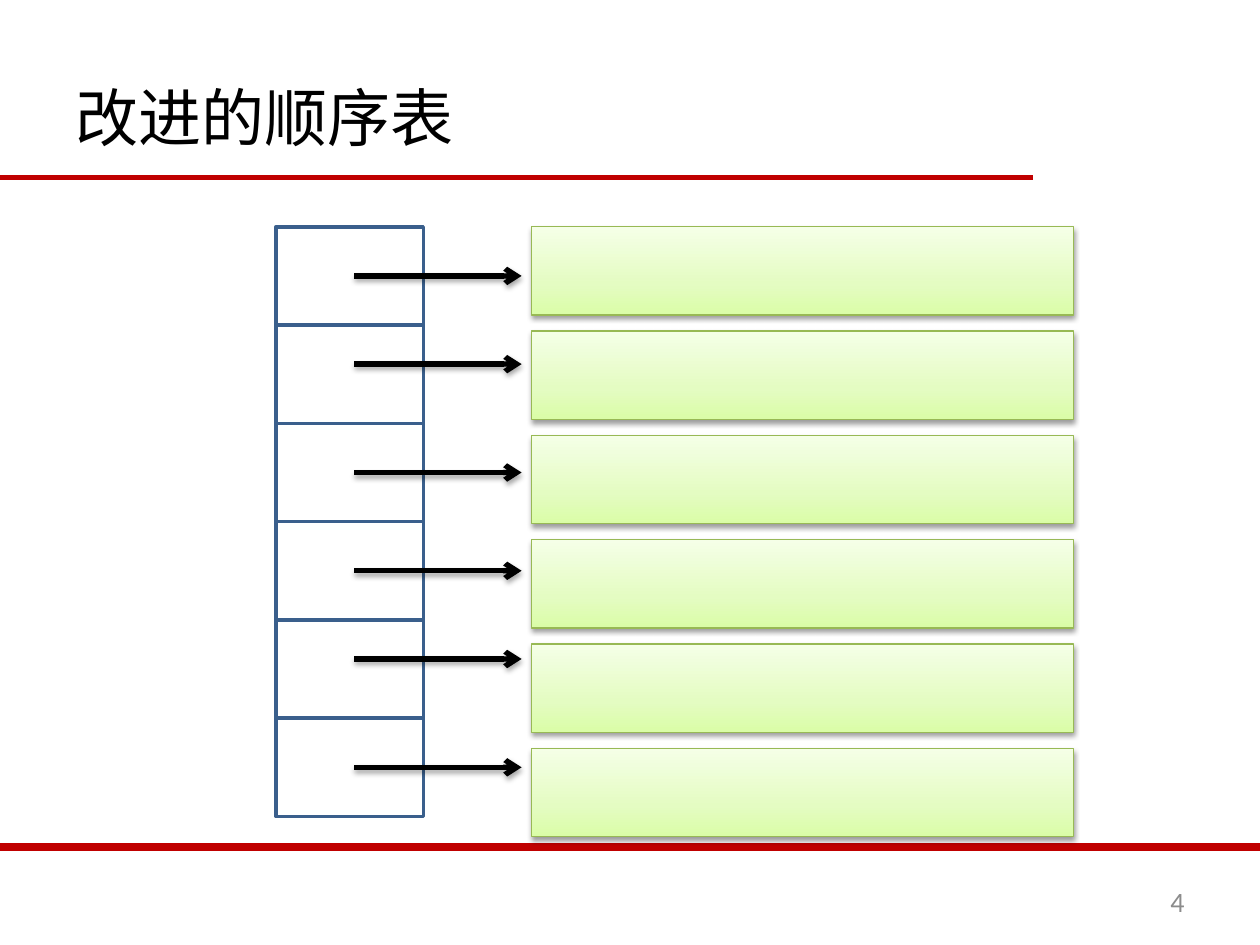
from copy import deepcopy
from lxml import etree
from pptx import Presentation
from pptx.dml.color import RGBColor
from pptx.enum.shapes import MSO_CONNECTOR, MSO_SHAPE
from pptx.enum.text import MSO_ANCHOR, PP_ALIGN
from pptx.oxml.ns import qn
from pptx.util import Inches, Pt

LINE = MSO_CONNECTOR.STRAIGHT
RECT = MSO_SHAPE.RECTANGLE
MID = MSO_ANCHOR.MIDDLE
LEFT, RIGHT = PP_ALIGN.LEFT, PP_ALIGN.RIGHT
HEX = {"red": "C00000", "black": "000000", "gray": "8C8C8C", "blue": "3A5F8C",
       "edge": "98B955", "deep": "DAFDA7", "soft": "E4FCC2", "pale": "F5FFE7"}
RGB = {name: RGBColor.from_string(code) for name, code in HEX.items()}
CJK = "Noto Sans CJK SC"


def add_line(x1, y1, x2, y2, color, width):
    line = slide.shapes.add_connector(LINE, Inches(x1), Inches(y1), Inches(x2), Inches(y2))
    line.line.color.rgb = RGB[color]
    line.line.width = Pt(width)
    etree.SubElement(line._element.spPr, qn("a:effectLst"))
    return line


def add_shadow(shape, dist, alpha):
    effects = shape._element.spPr.find(qn("a:effectLst"))
    shadow = etree.SubElement(effects, qn("a:outerShdw"), blurRad=str(Pt(3.1)),
                              dist=str(Pt(dist)), dir="5400000", rotWithShape="0")
    color = etree.SubElement(shadow, qn("a:srgbClr"), val=HEX["black"])
    etree.SubElement(color, qn("a:alpha"), val=str(alpha * 1000))


prs = Presentation()
prs.slide_width, prs.slide_height = Inches(10), Inches(7.5)
slide = prs.slides.add_slide(prs.slide_layouts[5])

add_line(0, 1.41, 8.2, 1.41, "red", 3)
add_line(0, 6.72, 10, 6.72, "red", 4.5)

title = slide.shapes.title
title.left, title.top = Inches(0.5), Inches(0.3)
title.width, title.height = Inches(9), Inches(1.25)
title.text_frame.vertical_anchor = MID
head = title.text_frame.paragraphs[0]
head.alignment = LEFT
run = head.add_run()
run.text = "改进的顺序表"
run.font.size = Pt(36)
run.font.name = CJK
run.font.color.rgb = RGB["black"]
etree.SubElement(run.font._element, qn("a:ea"), typeface=CJK)

box = slide.shapes.add_textbox(Inches(7.17), Inches(6.95), Inches(2.33), Inches(0.4))
box.text_frame.word_wrap = True
box.text_frame.vertical_anchor = MID
num = box.text_frame.paragraphs[0]
num.text = "4"
num.alignment = RIGHT
num.font.size = Pt(16)
num.font.name = "Calibri"
num.font.color.rgb = RGB["gray"]

for row in range(6):
    cell = slide.shapes.add_shape(RECT, Inches(2.19), Inches(1.8 + 0.78 * row),
                                  Inches(1.17), Inches(0.78))
    cell.shadow.inherit = False
    cell.fill.background()
    cell.line.color.rgb = RGB["blue"]
    cell.line.width = Pt(2)

for y in (2.19, 2.89, 3.75, 4.53, 5.23, 6.09):
    arrow = add_line(2.81, y, 4.14, y, "black", 3)
    etree.SubElement(arrow.line._get_or_add_ln(), qn("a:tailEnd"), type="arrow")
    add_shadow(arrow, 1.8, 35)

for row in range(6):
    block = slide.shapes.add_shape(RECT, Inches(4.22), Inches(1.8 + 0.828 * row),
                                   Inches(4.3), Inches(0.7))
    block.shadow.inherit = False
    block.fill.gradient()
    block.fill.gradient_angle = 90
    stops = block._element.spPr.find(".//" + qn("a:gsLst"))
    stops.insert(1, deepcopy(stops[0]))
    for stop, name, place in zip(block.fill.gradient_stops,
                                 ("deep", "soft", "pale"), (0, 0.35, 1)):
        stop.color.rgb = RGB[name]
        stop.position = place
    block.line.color.rgb = RGB["edge"]
    block.line.width = Pt(0.75)
    add_shadow(block, 1.6, 38)

prs.save("out.pptx")
